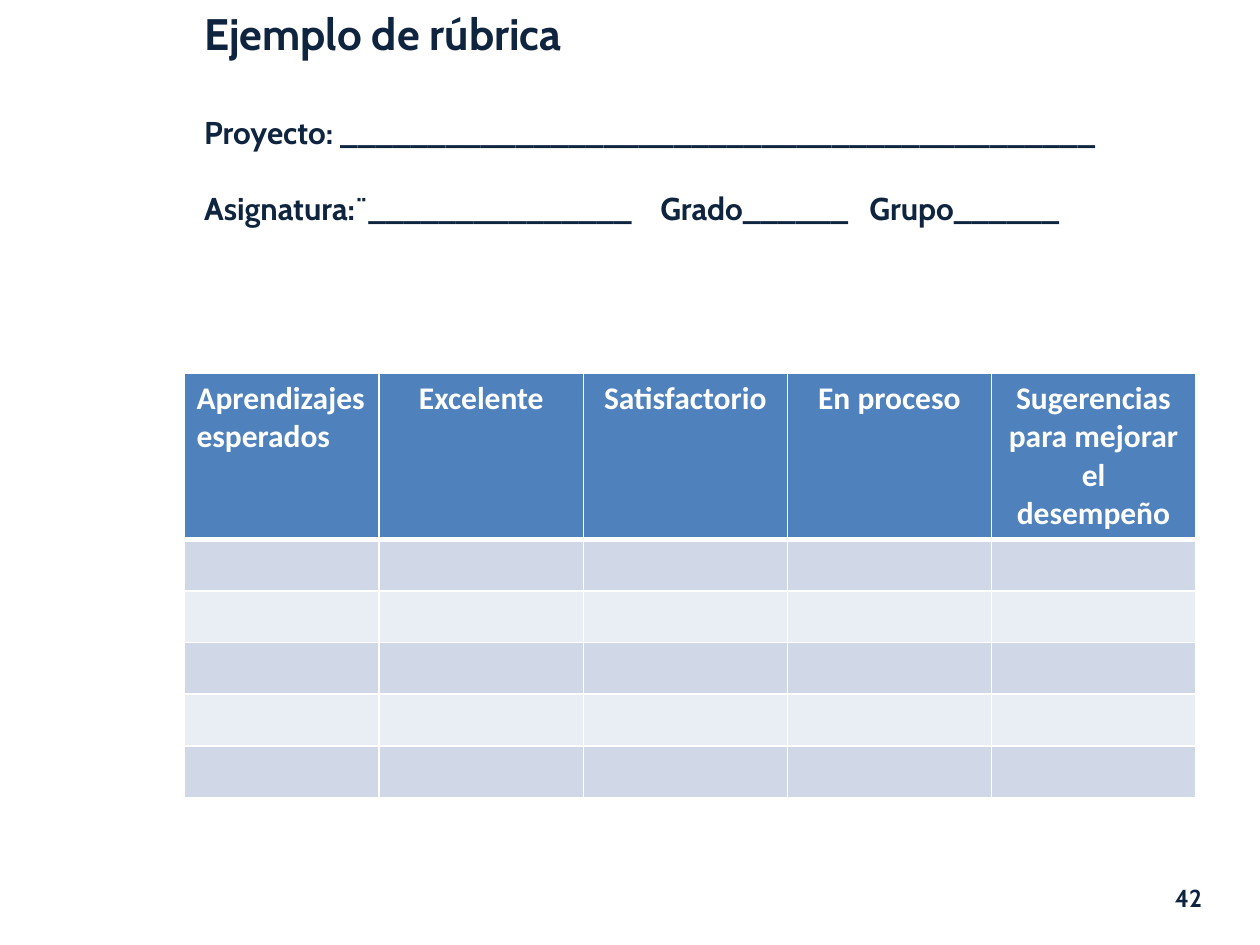
from typing import NamedTuple

from lxml.etree import SubElement
from pptx import Presentation
from pptx.dml.color import RGBColor
from pptx.enum.text import MSO_ANCHOR as Anchor, MSO_AUTO_SIZE as Fit, PP_ALIGN as Align
from pptx.oxml import parse_xml
from pptx.oxml.ns import nsdecls, qn
from pptx.util import Inches, Pt

HUES = {"ink": "0F243E", "head": "4F81BD", "odd": "D0D8E8", "even": "E9EDF4", "white": "FFFFFF"}
WIDE, HIGH = 10, 7.5
COLS = [1.55] + [1.62] * 4
ROWS = [1.32] + [0.41] * 5
TABS = [3.62, 5.28]
HEADS = ["Aprendizajes esperados", "Excelente", "Satisfactorio", "En proceso",
         "Sugerencias para mejorar el desempeño"]


class Line(NamedTuple):
    text: str
    size: float
    gap: float = 0


LINES = [
    Line("Ejemplo de rúbrica", 25.2),
    Line("Proyecto: " + "_" * 43, 18, 30.6),
    Line("Asignatura:¨" + "_" * 15 + "\tGrado" + "_" * 6 + "\tGrupo" + "_" * 6, 18, 21.9),
]


def tint(name: str) -> RGBColor:
    return RGBColor.from_string(HUES[name])


def add_run(para, text: str, size: float, face: str, hue: str) -> None:
    run = para.add_run()
    run.text = text
    font = run.font
    font.size, font.name, font.bold = Pt(size), face, True
    font.color.rgb = tint(hue)


def set_tabs(para, stops: list[float]) -> None:
    tabs = SubElement(para._p.get_or_add_pPr(), qn("a:tabLst"))
    for stop in stops:
        SubElement(tabs, qn("a:tab"), pos=str(Inches(stop)), algn="l")


def set_edges(cell, top: float, base: float) -> None:
    """Rule the cell in white; top and base are widths in points."""
    props = cell._tc.get_or_add_tcPr()
    for spot, (side, width) in enumerate([("L", 1), ("R", 1), ("T", top), ("B", base)]):
        props.insert(spot, parse_xml(
            f'<a:ln{side} {nsdecls("a")} w="{Pt(width)}"><a:solidFill>'
            f'<a:srgbClr val="{HUES["white"]}"/></a:solidFill></a:ln{side}>'))


def add_title(slide) -> None:
    title = slide.shapes.title
    title.left, title.top = Inches(1.52), Inches(0.3)
    title.width, title.height = Inches(8.12), Inches(1.25)
    frame = title.text_frame
    frame.word_wrap, frame.auto_size = True, Fit.NONE
    frame.vertical_anchor = Anchor.MIDDLE
    for spot, line in enumerate(LINES):
        para = frame.add_paragraph() if spot else frame.paragraphs[0]
        para.alignment = Align.LEFT
        para.space_before = Pt(line.gap)
        if "\t" in line.text:
            set_tabs(para, TABS)
        add_run(para, line.text, line.size, "Cabin", "ink")


def add_grid(slide) -> None:
    grid = slide.shapes.add_table(len(ROWS), len(COLS), Inches(1.46), Inches(2.96),
                                  Inches(sum(COLS)), Inches(sum(ROWS))).table
    for col, width in zip(grid.columns, COLS):
        col.width = Inches(width)
    for y, (row, height) in enumerate(zip(grid.rows, ROWS)):
        row.height = Inches(height)
        for x, cell in enumerate(row.cells):
            cell.fill.solid()
            cell.fill.fore_color.rgb = tint("head" if y == 0 else "odd" if y % 2 else "even")
            set_edges(cell, 3 if y == 1 else 1, 3 if y == 0 else 1)
            para = cell.text_frame.paragraphs[0]
            if y == 0:
                para.alignment = Align.CENTER if x else Align.LEFT
                add_run(para, HEADS[x], 18, "Calibri", "white")


def add_number(slide) -> None:
    box = slide.shapes.add_textbox(Inches(0.9 * WIDE), Inches(0.92 * HIGH),
                                   Inches(0.64), Inches(0.06 * HIGH))
    frame = box.text_frame
    frame.word_wrap = True
    frame.vertical_anchor = Anchor.MIDDLE
    para = frame.paragraphs[0]
    para.alignment = Align.RIGHT
    add_run(para, "42", 14, "Cabin", "ink")


def main() -> None:
    deck = Presentation()
    deck.slide_width, deck.slide_height = Inches(WIDE), Inches(HIGH)
    slide = deck.slides.add_slide(deck.slide_layouts[5])
    add_title(slide)
    add_number(slide)
    add_grid(slide)
    deck.save("out.pptx")


if __name__ == "__main__":
    main()
